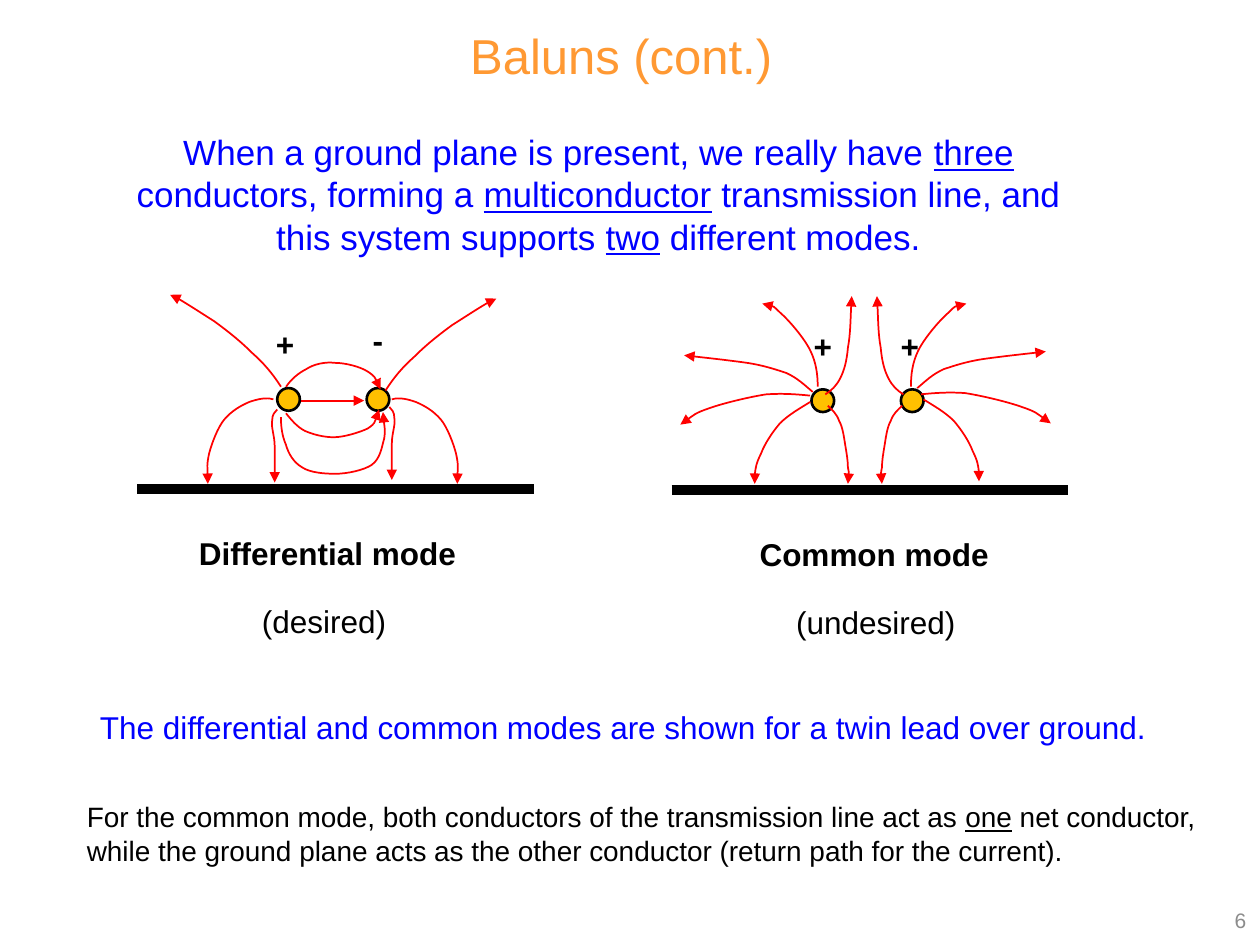
import dataclasses
import typing

import lxml.etree
import pptx
import pptx.dml.color
import pptx.enum.shapes
import pptx.enum.text
import pptx.oxml
import pptx.oxml.ns
import pptx.util

COLUMNS, ROWS = 100, 75
CELL = pptx.util.Inches(0.1)
BLACK, BLUE, RED = "000000", "0000FF", "FF0000"
ALIGN = pptx.enum.text.PP_ALIGN
Point = tuple[float, float]


@dataclasses.dataclass(frozen=True)
class Label:
    text: str
    left: float
    top: float
    width: float
    height: float
    size: int = 18
    color: str = BLACK
    bold: bool = False
    align: typing.Any = ALIGN.LEFT
    wrap: bool = False
    grow: bool = True


@dataclasses.dataclass(frozen=True)
class Mirror:
    axis: float
    drop: float = 0

    def apply(self, point: Point) -> Point:
        return 2 * self.axis - point[0], point[1] + self.drop


@dataclasses.dataclass(frozen=True)
class FieldLine:
    points: list[Point]
    mirror: typing.Optional[Mirror] = None


@dataclasses.dataclass(frozen=True)
class Mode:
    left: float
    ground: float
    field_lines: list[FieldLine]


LABELS = [
    Label("Baluns (cont.)", 3.5, 1.5, 91.6, 5.7, 28, "FF9933", align=ALIGN.CENTER, wrap=True),
    Label("6", 76.6, 71, 23.3, 4, 12, "8C8C8C", align=ALIGN.RIGHT, wrap=True, grow=False),
    Label("When a ground plane is present, we really have _three_ conductors, forming a "
          "_multiconductor_ transmission line, and this system supports _two_ different modes.",
          8.1, 9.9, 78.8, 11.1, 20, BLUE, align=ALIGN.CENTER, wrap=True),
    Label("The differential and common modes are shown for a twin lead over ground.",
          5.9, 55.7, 87.1, 4, color=BLUE, align=ALIGN.CENTER),
    Label("For the common mode, both conductors of the transmission line act as _one_ net "
          "conductor, while the ground plane acts as the other conductor (return path for "
          "the current).", 5.9, 63, 90.5, 6.4, 16, wrap=True),
    Label("Differential mode", 14.8, 41.9, 22.6, 4, bold=True),
    Label("(desired)", 19.8, 47.3, 12, 4),
    Label("+", 20.9, 25.3, 3.5, 4, bold=True),
    Label("-", 28.6, 25, 2.9, 4, bold=True),
    Label("Common mode", 59.3, 42, 21.1, 4, bold=True),
    Label("(undesired)", 62.2, 47.4, 14.8, 4),
    Label("+", 63.6, 25.5, 3.5, 4, bold=True),
    Label("+", 70.5, 25.5, 3.5, 4, bold=True),
]

DIFFERENTIAL = Mode(10.9, 38.8, [
    FieldLine([(22.7, 32.8), (23.1, 33.3), (23.6, 33.9), (24.2, 34.2), (24.9, 34.5),
               (25.7, 34.7), (26.5, 34.7), (27.3, 34.7), (28.6, 34.3), (29.2, 34),
               (29.8, 33.6), (29.9, 33.1), (30.1, 32.5)]),
    FieldLine([(22.7, 30.7), (23.1, 30.1), (23.7, 29.6), (24.3, 29.3), (24.9, 28.9),
               (25.8, 28.7), (26.6, 28.8), (27.4, 28.8), (28.6, 29.1), (29.2, 29.5),
               (29.8, 29.9), (30, 30.4), (30.2, 30.9)]),
    FieldLine([(21.7, 31.7), (21.1, 31.5), (20.4, 31.7), (19.8, 31.9), (19.1, 32.2),
               (18.4, 32.6), (17.8, 33.3), (17.3, 33.9), (16.8, 35.2), (16.6, 36),
               (16.4, 36.9), (16.5, 37.6), (16.5, 38.4)], Mirror(26.4)),
    FieldLine([(22.3, 30.7), (21.6, 29.6), (20.9, 28.8), (20, 28), (19.1, 27.1),
               (18.1, 26.3), (17, 25.5), (15.9, 24.8), (13.6, 23.3), (13.5, 23.4)],
              Mirror(26.45, 0.3)),
    FieldLine([(22, 32.5), (21.8, 32.7), (21.6, 32.9), (21.6, 33.4), (21.5, 33.9),
               (21.8, 34.6), (21.8, 35.4), (21.8, 36.2), (21.8, 37.7), (21.8, 38.3)],
              Mirror(26.45, -0.2)),
    FieldLine([(22.3, 33.1), (22.3, 33.9), (22.4, 34.6), (22.7, 35.3), (22.9, 36),
               (23.3, 36.7), (24, 37.1), (24.6, 37.5), (25.7, 37.6), (26.6, 37.6),
               (27.6, 37.6), (28.9, 37.3), (29.5, 36.9), (30.2, 36.4), (30.3, 35.5),
               (30.5, 34.8), (30.6, 34.1), (30.4, 33), (30.4, 32.7)]),
])

COMMON = Mode(53.3, 38.9, [
    FieldLine([(65.5, 31.3), (66, 31), (66.4, 30.6), (66.7, 30), (67, 29.4),
               (67.2, 28.7), (67.3, 27.6), (67.5, 26.5), (67.5, 25), (67.6, 23.5)],
              Mirror(68.6)),
    FieldLine([(64.3, 31.9), (63.5, 32.4), (62.6, 32.9), (61.9, 33.6), (61.3, 34.3),
               (60.7, 35.2), (60.4, 36), (60, 36.8), (59.8, 37.9), (59.9, 38.4)],
              Mirror(68.8, -0.2)),
    FieldLine([(64.5, 31.1), (63.9, 30.6), (63.3, 30), (62.4, 29.6), (61.5, 29.3),
               (60.6, 29), (59.3, 28.8), (57.9, 28.6), (54.3, 28.2), (54.3, 28.2)],
              Mirror(68.65, -0.3)),
    FieldLine([(65.7, 32.2), (66, 32.5), (66.4, 32.8), (66.6, 33.4), (66.9, 33.9),
               (67, 34.8), (67.1, 35.4), (67.2, 36), (67.3, 36.6), (67.3, 37.1),
               (67.4, 37.6), (67.4, 38), (67.3, 38.4)], Mirror(68.65)),
    FieldLine([(64.3, 31.4), (63.3, 31.3), (62.2, 31.2), (60.8, 31.3), (59.5, 31.5),
               (57.4, 32), (56.3, 32.4), (55.1, 32.8), (54, 33.7), (54, 33.7)],
              Mirror(68.7, -0.1)),
    FieldLine([(64.9, 30.7), (64.9, 29.8), (64.8, 28.8), (64.3, 27.8), (63.8, 26.8),
               (62.6, 25.4), (61.9, 24.8), (61.3, 24.2), (60.9, 24.1), (60.5, 24.1)],
              Mirror(68.6)),
])


def cells(count: float) -> int:
    return round(count * CELL)


def rgb(value: str) -> pptx.dml.color.RGBColor:
    return pptx.dml.color.RGBColor.from_string(value)


def set_line(shape: typing.Any, color: str, width: float, arrow: bool = False) -> None:
    shape.line.color.rgb = rgb(color)
    shape.line.width = pptx.util.Pt(width)
    if arrow:
        tail = lxml.etree.SubElement(shape.line._get_or_add_ln(), pptx.oxml.ns.qn("a:tailEnd"))
        tail.set("type", "triangle")


def add_label(slide: typing.Any, label: Label) -> None:
    box = slide.shapes.add_textbox(*map(cells, (label.left, label.top, label.width, label.height)))
    frame = box.text_frame
    frame.word_wrap = label.wrap
    if label.grow:
        frame.auto_size = pptx.enum.text.MSO_AUTO_SIZE.SHAPE_TO_FIT_TEXT
    else:
        frame.vertical_anchor = pptx.enum.text.MSO_ANCHOR.MIDDLE
    paragraph = frame.paragraphs[0]
    paragraph.alignment = label.align
    font = paragraph.font
    font.name, font.size, font.bold = "Arial", pptx.util.Pt(label.size), label.bold
    font.color.rgb = rgb(label.color)
    for index, part in enumerate(label.text.split("_")):
        run = paragraph.add_run()
        run.text = part
        if index % 2:
            run.font.underline = True


def add_straight(slide: typing.Any, begin: Point, end: Point, color: str, width: float,
                 arrow: bool = False) -> None:
    connector = slide.shapes.add_connector(
        pptx.enum.shapes.MSO_CONNECTOR.STRAIGHT, *map(cells, begin + end))
    set_line(connector, color, width, arrow)
    lxml.etree.SubElement(connector._element.spPr, pptx.oxml.ns.qn("a:effectLst"))


def add_curve(slide: typing.Any, points: list[Point]) -> None:
    start, *rest = [(cells(x), cells(y)) for x, y in points]
    builder = slide.shapes.build_freeform(*start)
    builder.add_line_segments(rest, close=False)
    shape = builder.convert_to_shape()
    segments = list(shape._element.iter(pptx.oxml.ns.qn("a:lnTo")))
    outline = segments[0].getparent()
    for first in range(0, len(segments), 3):
        curve = lxml.etree.SubElement(outline, pptx.oxml.ns.qn("a:cubicBezTo"))
        for segment in segments[first:first + 3]:
            curve.append(segment[0])
            outline.remove(segment)
    shape.shadow.inherit = False
    shape.fill.background()
    set_line(shape, RED, 1, arrow=True)


def add_mode(slide: typing.Any, mode: Mode) -> None:
    add_straight(slide, (mode.left, mode.ground), (mode.left + 31.5, mode.ground), BLACK, 6)
    for offset in (11.1, 18.2):
        conductor = slide.shapes.add_shape(
            pptx.enum.shapes.MSO_SHAPE.OVAL,
            *map(cells, (mode.left + offset, mode.ground - 8, 1.8, 1.8)))
        conductor.shadow.inherit = False
        conductor.fill.solid()
        conductor.fill.fore_color.rgb = rgb("FFC000")
        set_line(conductor, BLACK, 1.5)
    for field_line in mode.field_lines:
        add_curve(slide, field_line.points)
        if field_line.mirror:
            add_curve(slide, [field_line.mirror.apply(point) for point in field_line.points])


def main() -> None:
    presentation = pptx.Presentation()
    presentation.slide_width, presentation.slide_height = cells(COLUMNS), cells(ROWS)
    slide = presentation.slides.add_slide(presentation.slide_layouts[6])
    add_straight(slide, (22.7, 31.8), (28.9, 31.8), RED, 1, arrow=True)
    for mode in (DIFFERENTIAL, COMMON):
        add_mode(slide, mode)
    for label in LABELS:
        add_label(slide, label)
    presentation.save("out.pptx")


if __name__ == "__main__":
    main()
